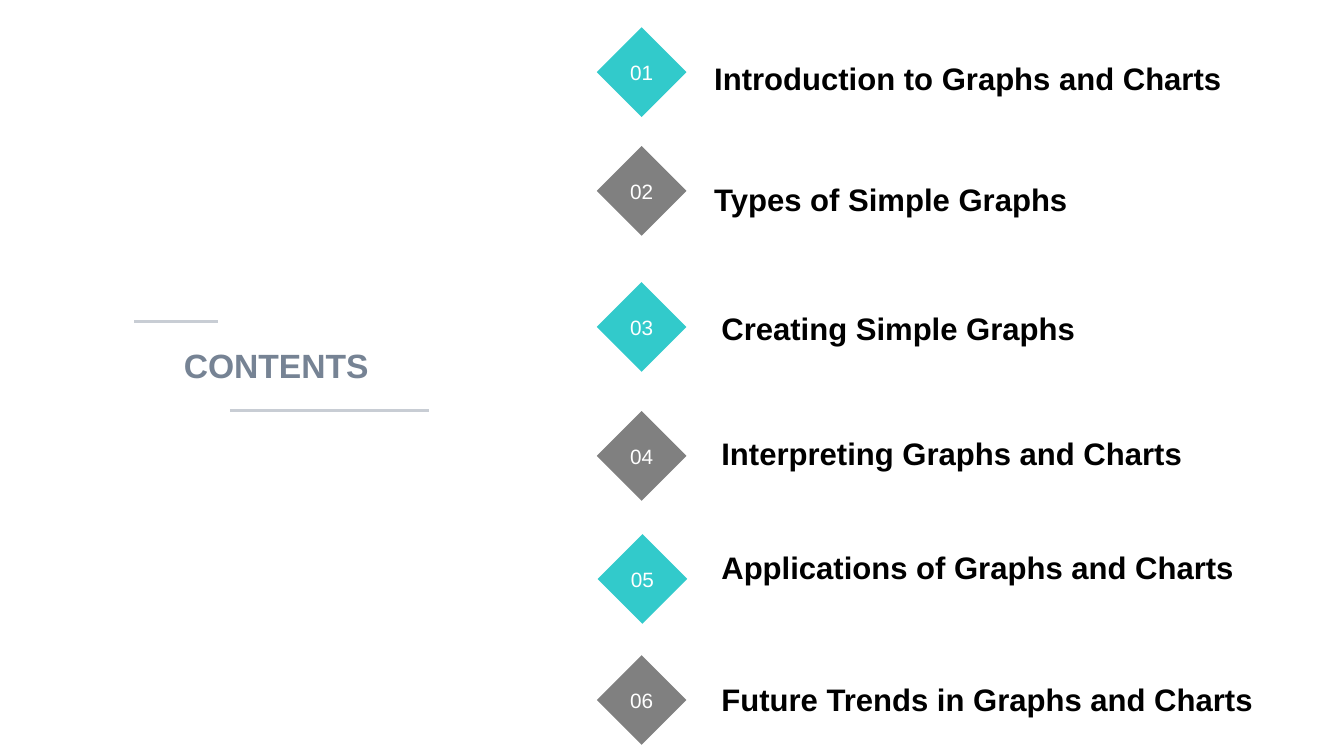
from dataclasses import dataclass

from pptx import Presentation
from pptx.dml.color import RGBColor as Rgb
from pptx.enum.shapes import MSO_CONNECTOR as Connector, MSO_SHAPE as Shape
from pptx.enum.text import MSO_ANCHOR as Anchor, PP_ALIGN as Align
from pptx.oxml.xmlchemy import OxmlElement
from pptx.util import Cm, Pt

# Content: title, diamond left and top, title left and top (cm)
HEADING = "CONTENTS"
CHAPTERS = [
    ("Introduction to Graphs and Charts", 15.04, 0.69, 17.75, 1.5),
    ("Types of Simple Graphs", 15.04, 3.68, 17.75, 4.55),
    ("Creating Simple Graphs", 15.04, 7.11, 17.93, 7.82),
    ("Interpreting Graphs and Charts", 15.04, 10.36, 17.93, 10.97),
    ("Applications of Graphs and Charts", 15.06, 13.46, 17.93, 13.82),
    ("Future Trends in Graphs and Charts", 15.04, 16.51, 17.93, 17.15),
]
# Rules around the heading: start, end, height (cm)
RULES = [(5.49, 3.38, 8.1), (5.79, 10.8, 10.34)]
DIAMOND_SIZE = 2.26
TITLE_SIZE = (14.25, 1.02)


@dataclass(frozen=True)
class Theme:
    font: str = "Arial"
    accents: tuple = ("32CACB", "808080")
    number: str = "FFFFFF"
    title: str = "000000"
    heading: str = "768394"
    rule: str = "C8CDD4"
    number_size: float = 14.8
    title_size: float = 22.2
    heading_size: float = 24
    rule_width: float = 1.75


THEME = Theme()


def write(box, text, size, color, bold=False, align=Align.LEFT,
          anchor=Anchor.TOP, insets=(0, 0, 0)):
    """Fill a box with one line; insets are side, top and bottom in cm."""
    frame = box.text_frame
    frame.word_wrap = True
    frame.vertical_anchor = anchor
    side, top, bottom = insets
    frame.margin_left = frame.margin_right = Cm(side)
    frame.margin_top, frame.margin_bottom = Cm(top), Cm(bottom)
    para = frame.paragraphs[0]
    para.text = text
    para.alignment = align
    para.font.name = THEME.font
    para.font.size = Pt(size)
    para.font.bold = bold
    para.font.color.rgb = Rgb.from_string(color)


def add_diamond(page, left, top, number):
    diamond = page.shapes.add_shape(
        Shape.DIAMOND, Cm(left), Cm(top), Cm(DIAMOND_SIZE), Cm(DIAMOND_SIZE))
    diamond.shadow.inherit = False
    diamond.fill.solid()
    accent = THEME.accents[(number - 1) % len(THEME.accents)]
    diamond.fill.fore_color.rgb = Rgb.from_string(accent)
    diamond.line.fill.background()
    write(diamond, f"{number:02d}", THEME.number_size, THEME.number,
          align=Align.CENTER, anchor=Anchor.MIDDLE)


def add_rule(page, start, end, height):
    rule = page.shapes.add_connector(
        Connector.STRAIGHT, Cm(start), Cm(height), Cm(end), Cm(height))
    rule.line.color.rgb = Rgb.from_string(THEME.rule)
    rule.line.width = Pt(THEME.rule_width)
    rule._element.spPr.append(OxmlElement("a:effectLst"))


def main():
    deck = Presentation()
    deck.slide_width, deck.slide_height = Cm(33.87), Cm(19.05)
    page = deck.slides.add_slide(deck.slide_layouts[6])

    # Heading between its two rules
    heading = page.shapes.add_textbox(Cm(4.19), Cm(8.48), Cm(5.54), Cm(1.47))
    write(heading, HEADING, THEME.heading_size, THEME.heading, bold=True,
          align=Align.CENTER, insets=(0.25, 0.2, 0.13))
    for rule in RULES:
        add_rule(page, *rule)

    # Numbered chapters
    width, height = TITLE_SIZE
    for number, chapter in enumerate(CHAPTERS, start=1):
        title, diamond_left, diamond_top, left, top = chapter
        add_diamond(page, diamond_left, diamond_top, number)
        box = page.shapes.add_textbox(Cm(left), Cm(top), Cm(width), Cm(height))
        write(box, title, THEME.title_size, THEME.title, bold=True,
              anchor=Anchor.BOTTOM, insets=(0.25, 0, 0.09))

    deck.save("out.pptx")


if __name__ == "__main__":
    main()
